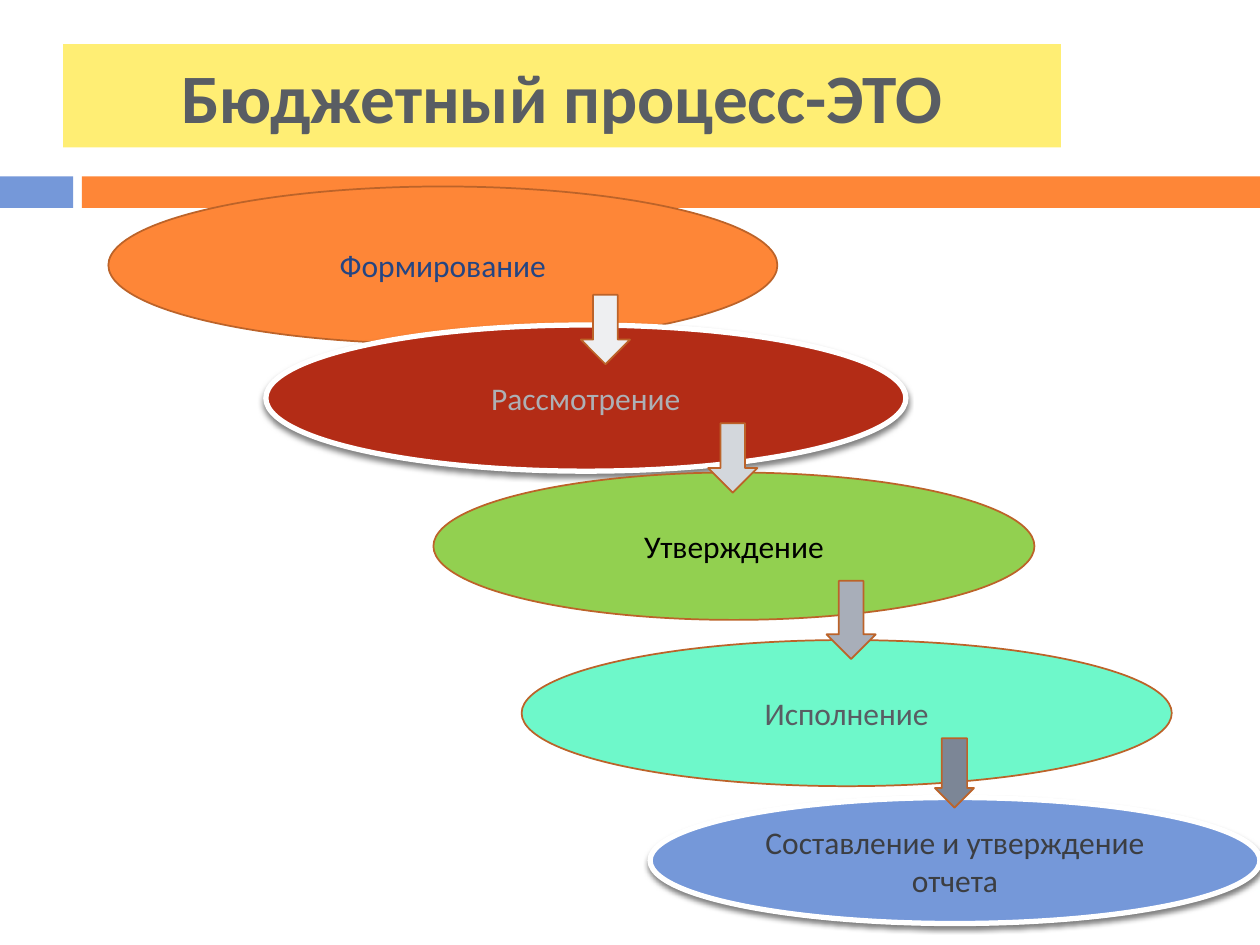
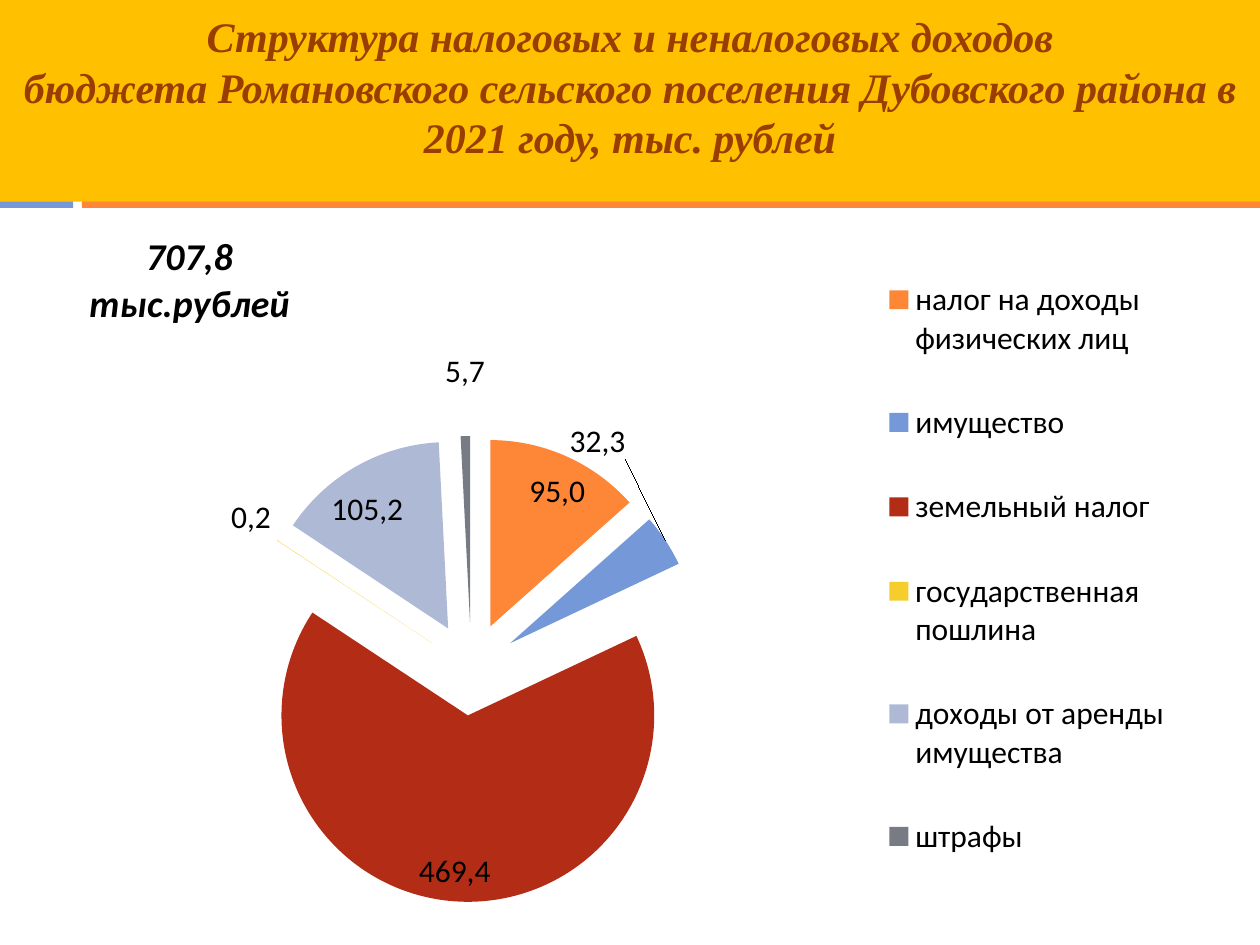
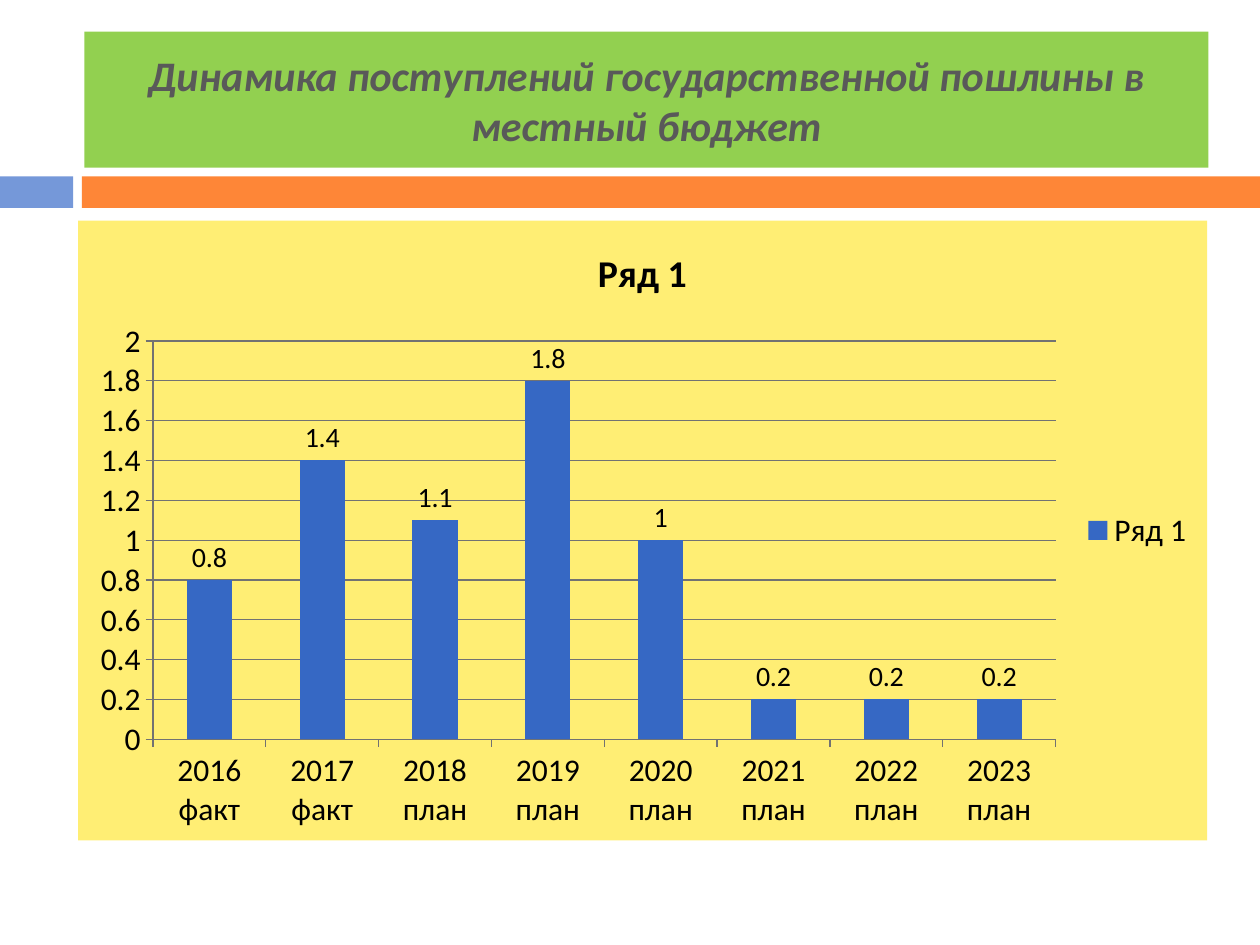
import dataclasses

import lxml.etree
import pptx
import pptx.chart.data
import pptx.dml.color
import pptx.enum.chart
import pptx.enum.shapes
import pptx.enum.text
import pptx.oxml.ns
import pptx.util

Inches = pptx.util.Inches
Pt = pptx.util.Pt
qn = pptx.oxml.ns.qn
SHAPES = pptx.enum.shapes.MSO_SHAPE
LABELS = pptx.enum.chart.XL_LABEL_POSITION


@dataclasses.dataclass(frozen=True)
class Theme:
    blue: str = "7598D9"
    orange: str = "FE8637"
    outline: str = "BC6329"
    yellow: str = "FFEE74"
    gold: str = "FFC000"
    green: str = "92D050"
    red: str = "B32C16"
    mint: str = "6EF8CA"
    white: str = "FFFFFF"
    black: str = "000000"
    slate: str = "595D63"
    gray: str = "595959"
    grid: str = "727272"
    brown: str = "9A3D01"
    navy: str = "244583"
    silver: str = "ADB0B5"
    charcoal: str = "3C3E42"
    bar: str = "3668C4"
    font: str = "Calibri"
    serif: str = "Times New Roman"
    headline: float = 39.6
    heading: float = 24
    chart_title: float = 21.6
    body: float = 18
    value: float = 16


THEME = Theme()


def rgb(color):
    return pptx.dml.color.RGBColor.from_string(color)


def style_font(font, size, color=THEME.black, name=THEME.font, bold=False, italic=False):
    font.name = name
    font.size = Pt(size)
    font.bold = bold
    font.italic = italic
    font.color.rgb = rgb(color)


def paint(part, color):
    part.fill.solid()
    part.fill.fore_color.rgb = rgb(color)


def add_block(slide, preset, box, fill, line=None, line_width=1):
    block = slide.shapes.add_shape(preset, *map(Inches, box))
    block.shadow.inherit = False
    paint(block, fill)
    if line:
        block.line.color.rgb = rgb(line)
        block.line.width = Pt(line_width)
    else:
        block.line.fill.background()
    return block


def write(block, text, **font):
    frame = block.text_frame
    frame.word_wrap = True
    frame.vertical_anchor = pptx.enum.text.MSO_ANCHOR.MIDDLE
    frame.text = text
    for paragraph in frame.paragraphs:
        paragraph.alignment = pptx.enum.text.PP_ALIGN.CENTER
        style_font(paragraph.font, **font)


def add_child(parent, tag, **attributes):
    return lxml.etree.SubElement(parent, qn(tag), attributes)


def cast_shadow(block):
    effects = block._element.spPr.find(qn("a:effectLst"))
    shadow = add_child(effects, "a:outerShdw", blurRad=str(Pt(3)), dist=str(Pt(2)),
                       dir="5400000", rotWithShape="0")
    color = add_child(shadow, "a:srgbClr", val=THEME.black)
    add_child(color, "a:alpha", val="50000")


def place(element, index, **values):
    for old in element.findall(qn("c:layout")):
        element.remove(old)
    layout = lxml.etree.Element(qn("c:layout"))
    manual = add_child(layout, "c:manualLayout")
    for tag, value in values.items():
        add_child(manual, f"c:{tag}", val=str(value))
    element.insert(index, layout)


def add_title(slide, text, box, fill, **font):
    write(add_block(slide, SHAPES.RECTANGLE, box, fill), text, bold=True, **font)


def add_slide(deck):
    slide = deck.slides.add_slide(deck.slide_layouts[6])
    top, height = 1.4, 0.25
    add_block(slide, SHAPES.RECTANGLE, (0, top, 0.58, height), THEME.blue)
    add_block(slide, SHAPES.RECTANGLE, (0.65, top, 9.35, height), THEME.orange)
    return slide


def add_stage(slide, text, box, fill, color, raised):
    line, width = (THEME.white, 3) if raised else (THEME.outline, 1)
    stage = add_block(slide, SHAPES.OVAL, box, fill, line, width)
    write(stage, text, size=THEME.body, color=color)
    if raised:
        cast_shadow(stage)


def add_stages(slide, box):
    left, top, _, _ = box
    stages = [
        ("Формирование", 0, 0, 5.31, 1.25, THEME.orange, THEME.navy, False),
        ("Рассмотрение", 1.25, 1.1, 5.08, 1.16, THEME.red, THEME.silver, True),
        ("Утверждение", 2.58, 2.27, 4.77, 1.17, THEME.green, THEME.black, False),
        ("Исполнение", 3.28, 3.6, 5.16, 1.16, THEME.mint, THEME.slate, False),
        ("Составление и утверждение отчета", 4.3, 4.85, 4.84, 1, THEME.blue, THEME.charcoal, True),
    ]
    for text, x, y, width, height, fill, color, raised in stages:
        add_stage(slide, text, (left + x, top + y, width, height), fill, color, raised)
    arrows = [
        (3.75, 0.86, 0.39, 0.55, "EEEFF1", 0.5),
        (4.76, 1.88, 0.39, 0.55, "D3D7DC", 0.5),
        (5.7, 3.13, 0.39, 0.62, "A8AEB9", 0.5),
        (6.56, 4.38, 0.31, 0.55, "7C8696", 0.65),
    ]
    for x, y, width, height, fill, shaft in arrows:
        arrow = add_block(slide, SHAPES.DOWN_ARROW, (left + x, top + y, width, height),
                          fill, THEME.outline)
        arrow.adjustments[0] = shaft


def add_chart(slide, kind, box, series_name, values, title, number_format, italic=False):
    data = pptx.chart.data.CategoryChartData(number_format=number_format)
    data.categories = list(values)
    data.add_series(series_name, list(values.values()))
    chart = slide.shapes.add_chart(kind, *map(Inches, box), data).chart
    style_font(chart.font, THEME.body)
    chart.has_title = True
    chart.chart_title.text_frame.text = title
    for paragraph in chart.chart_title.text_frame.paragraphs:
        for run in paragraph.runs:
            style_font(run.font, THEME.chart_title, bold=True, italic=italic)
    chart.has_legend = True
    chart.legend.position = pptx.enum.chart.XL_LEGEND_POSITION.RIGHT
    chart.legend.include_in_layout = False
    style_font(chart.legend.font, THEME.body)
    return chart


def arrange_income_pie(chart, property_label):
    edges = {"xMode": "edge", "yMode": "edge"}
    place(chart.chart_title._element, 1, **edges, x=0.02, y=0.01)
    place(chart.legend._element, 1, **edges, x=0.71, y=0.02, w=0.28, h=0.96)
    place(chart._chartSpace.chart.plotArea, 0, layoutTarget="inner", **edges,
          x=0.15, y=0.31, w=0.42, h=0.67)
    place(property_label._dLbl, 1, x=-0.09, y=-0.11)


def add_income_pie(slide, box):
    incomes = {
        "налог на доходы физических лиц": 95,
        "имущество": 32.3,
        "земельный налог": 469.4,
        "государственная пошлина": 0.2,
        "доходы от аренды имущества": 105.2,
        "штрафы": 5.7,
    }
    captions = ["95,0", "32,3", "469,4", "0,2", "105,2", "5,7\n"]
    colors = [THEME.orange, THEME.blue, THEME.red, "F5CD2D", "AEBAD5", "777C84"]
    chart = add_chart(slide, pptx.enum.chart.XL_CHART_TYPE.PIE, box, "707,8 тыс.рублей",
                      incomes, "707,8\nтыс.рублей", "0.0", italic=True)
    plot = chart.plots[0]
    plot.vary_by_categories = True
    series = plot.series[0]
    for index, (caption, color) in enumerate(zip(captions, colors)):
        point = series.points[index]
        paint(point.format, color)
        label = point.data_label
        run = label.text_frame.paragraphs[0].add_run()
        run.text = caption
        style_font(run.font, THEME.body)
        label.position = LABELS.BEST_FIT
    series_labels = series.data_labels
    series_labels.show_value = True
    style_font(series_labels.font, THEME.body)
    if series_labels._element.find(qn("c:showLeaderLines")) is None:
        add_child(series_labels._element, "c:showLeaderLines", val="1")
    explosion = lxml.etree.Element(qn("c:explosion"), {"val": "25"})
    series._element.find(qn("c:dPt")).addprevious(explosion)
    arrange_income_pie(chart, series.points[1].data_label)


def add_duty_columns(slide, box):
    duties = {
        "2016 факт": 0.8, "2017 факт": 1.4, "2018 план": 1.1, "2019 план": 1.8,
        "2020 план": 1, "2021 план": 0.2, "2022 план": 0.2, "2023 план": 0.2,
    }
    chart = add_chart(slide, pptx.enum.chart.XL_CHART_TYPE.COLUMN_CLUSTERED, box,
                      "Ряд 1", duties, "Ряд 1", "General")
    background = lxml.etree.Element(qn("c:spPr"))
    add_child(add_child(background, "a:solidFill"), "a:srgbClr", val=THEME.yellow)
    add_child(add_child(background, "a:ln"), "a:noFill")
    chart._chartSpace.find(qn("c:txPr")).addprevious(background)
    plot = chart.plots[0]
    plot.vary_by_categories = False
    plot.gap_width = 150
    paint(plot.series[0].format, THEME.bar)
    plot.has_data_labels = True
    plot.data_labels.show_value = True
    plot.data_labels.position = LABELS.OUTSIDE_END
    style_font(plot.data_labels.font, THEME.value)
    amounts = chart.value_axis
    amounts.minimum_scale = 0
    amounts.maximum_scale = 2
    amounts.major_unit = 0.2
    amounts.has_major_gridlines = True
    for line in (amounts.major_gridlines.format.line, amounts.format.line,
                 chart.category_axis.format.line):
        line.color.rgb = rgb(THEME.grid)
        line.width = Pt(0.75)


def build_process_slide(deck):
    slide = add_slide(deck)
    add_title(slide, "Бюджетный процесс-ЭТО", (0.5, 0.35, 7.92, 0.82), THEME.yellow,
              size=THEME.headline, color=THEME.slate)
    add_stages(slide, (0.86, 1.48, 9.14, 5.85))


def build_income_slide(deck):
    slide = add_slide(deck)
    add_title(slide, "Структура налоговых и неналоговых доходов\vбюджета Романовского "
              "сельского поселения Дубовского района в 2021 году, тыс. рублей",
              (0, -0.23, 10, 1.83), THEME.gold, size=THEME.heading, color=THEME.brown,
              name=THEME.serif, italic=True)
    add_income_pie(slide, (0.5, 1.75, 9, 5.52))


def build_duty_slide(deck):
    slide = add_slide(deck)
    add_title(slide, "Динамика поступлений государственной пошлины в местный бюджет",
              (0.67, 0.25, 8.92, 1.08), THEME.green, size=THEME.heading,
              color=THEME.gray, italic=True)
    add_duty_columns(slide, (0.62, 1.75, 8.96, 4.92))


def main():
    deck = pptx.Presentation()
    deck.slide_width = Inches(10)
    deck.slide_height = Inches(7.5)
    build_process_slide(deck)
    build_income_slide(deck)
    build_duty_slide(deck)
    deck.save("out.pptx")


if __name__ == "__main__":
    main()
